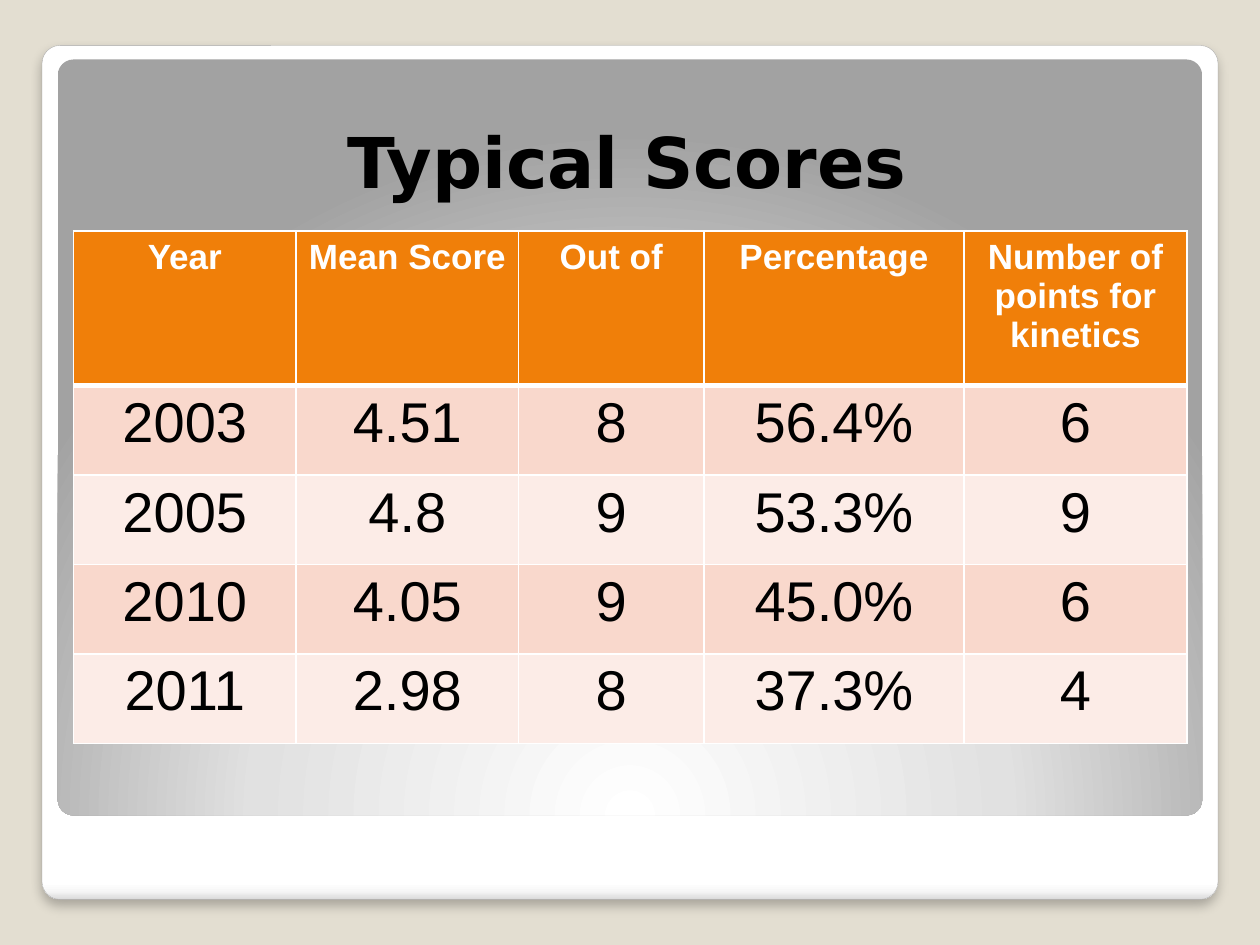
from pptx import Presentation
from pptx.dml.color import RGBColor
from pptx.enum.shapes import MSO_SHAPE as Preset
from pptx.enum.text import MSO_ANCHOR as Anchor, PP_ALIGN as Align
from pptx.oxml import parse_xml
from pptx.oxml.ns import nsdecls, qn
from pptx.util import Pt

HEADER = ["Year", "Mean Score", "Out of", "Percentage", "Number of points for kinetics"]
SCORES = [
    ["2003", "4.51", "8", "56.4%", "6"],
    ["2005", "4.8", "9", "53.3%", "9"],
    ["2010", "4.05", "9", "45.0%", "6"],
    ["2011", "2.98", "8", "37.3%", "4"],
]
COLUMN_WIDTHS = [127.2, 127.2, 105.8, 148.8, 127.2]
HEADER_HEIGHT, ROW_HEIGHT = 88.4, 51.1


def color(value):
    return RGBColor.from_string(value)


def drawing_element(tag, content):
    return parse_xml(f"<a:{tag} {nsdecls('a')}>{content}</a:{tag}>")


def solid(fill, value):
    fill.solid()
    fill.fore_color.rgb = color(value)


def write(frame, text, size=32, font="Arial", ink="000000", bold=False):
    paragraph = frame.paragraphs[0]
    paragraph.alignment = Align.CENTER
    run = paragraph.add_run()
    run.text = text
    run.font.name = font
    run.font.size = Pt(size)
    run.font.bold = bold
    run.font.color.rgb = color(ink)


class SlideBuilder:
    white = "FFFFFF"
    accent = "F07F09"
    bands = ["F9D8CC", "FCECE7"]
    corner = 0.021

    def __init__(self, slide, background):
        self.slide = slide
        solid(slide.background.fill, background)

    def panel(self, left, top, width, height, stops, direction):
        shape = self.slide.shapes.add_shape(
            Preset.ROUNDED_RECTANGLE, Pt(left), Pt(top), Pt(width), Pt(height))
        shape.adjustments[0] = self.corner
        shape.shadow.inherit = False
        shape.line.fill.background()
        stop_list = "".join(
            f'<a:gs pos="{position * 1000}"><a:srgbClr val="{value}"/></a:gs>'
            for position, value in stops)
        gradient = drawing_element("gradFill", f"<a:gsLst>{stop_list}</a:gsLst>{direction}")
        shape._element.spPr.find(qn("a:prstGeom")).addnext(gradient)
        return shape

    def outline(self, shape, value, width):
        solid(shape.line.fill, value)
        shape.line.width = Pt(width)

    def drop_shadow(self, shape, blur, distance, opacity):
        shadow = drawing_element("effectLst", (
            f'<a:outerShdw blurRad="{Pt(blur)}" dist="{Pt(distance)}" dir="5400000" '
            f'algn="t" rotWithShape="0"><a:srgbClr val="000000">'
            f'<a:alpha val="{opacity * 1000}"/></a:srgbClr></a:outerShdw>'))
        properties = shape._element.spPr
        properties.replace(properties.find(qn("a:effectLst")), shadow)

    def title(self, text, left, top, width, height):
        frame = self.slide.shapes.add_textbox(
            Pt(left), Pt(top), Pt(width), Pt(height)).text_frame
        frame.word_wrap = True
        frame.vertical_anchor = Anchor.BOTTOM
        write(frame, text, size=40, font="DejaVu Sans", bold=True)

    def borders(self, cell, top, bottom):
        properties = cell._tc.get_or_add_tcPr()
        for side, width in zip("LRTB", (1, 1, top, bottom)):
            line = drawing_element(
                f"ln{side}", f'<a:solidFill><a:srgbClr val="{self.white}"/></a:solidFill>')
            line.set("w", str(Pt(width)))
            properties.append(line)

    def table(self, left, top, header, rows, widths, header_height, row_height):
        heights = [header_height] + [row_height] * len(rows)
        table = self.slide.shapes.add_table(
            len(heights), len(widths), Pt(left), Pt(top),
            Pt(sum(widths)), Pt(sum(heights))).table
        for column, width in zip(table.columns, widths):
            column.width = Pt(width)
        for row, height in zip(table.rows, heights):
            row.height = Pt(height)
        for row_index, values in enumerate([header] + rows):
            is_header = row_index == 0
            for column_index, value in enumerate(values):
                cell = table.cell(row_index, column_index)
                self.borders(cell, 3 if row_index == 1 else 1, 3 if is_header else 1)
                if is_header:
                    solid(cell.fill, self.accent)
                    write(cell.text_frame, value, size=20, ink=self.white, bold=True)
                else:
                    solid(cell.fill, self.bands[(row_index - 1) % 2])
                    write(cell.text_frame, value)


def main():
    presentation = Presentation()
    presentation.slide_width, presentation.slide_height = Pt(720), Pt(540)
    slide = presentation.slides.add_slide(presentation.slide_layouts[6])
    builder = SlideBuilder(slide, "E3DED1")

    card = builder.panel(
        24, 26, 672, 488,
        [(0, "FFFFFF"), (98, "FFFFFF"), (99, "F7F7F7"), (100, "DADADA")],
        '<a:lin ang="5400000" scaled="0"/>')
    builder.outline(card, "A4A4A4", 0.16)
    builder.drop_shadow(card, blur=6, distance=4, opacity=25)
    builder.panel(
        33, 34, 654, 432,
        [(0, "FFFFFF"), (55, "E1E1E1"), (100, "A2A2A2")],
        '<a:path path="circle"><a:fillToRect l="50000" t="175000" r="50000" b="-75000"/></a:path>')

    builder.title("Typical Scores", 36, 36, 644.4, 83)
    builder.table(42, 132, HEADER, SCORES, COLUMN_WIDTHS, HEADER_HEIGHT, ROW_HEIGHT)
    presentation.save("out.pptx")


if __name__ == "__main__":
    main()
